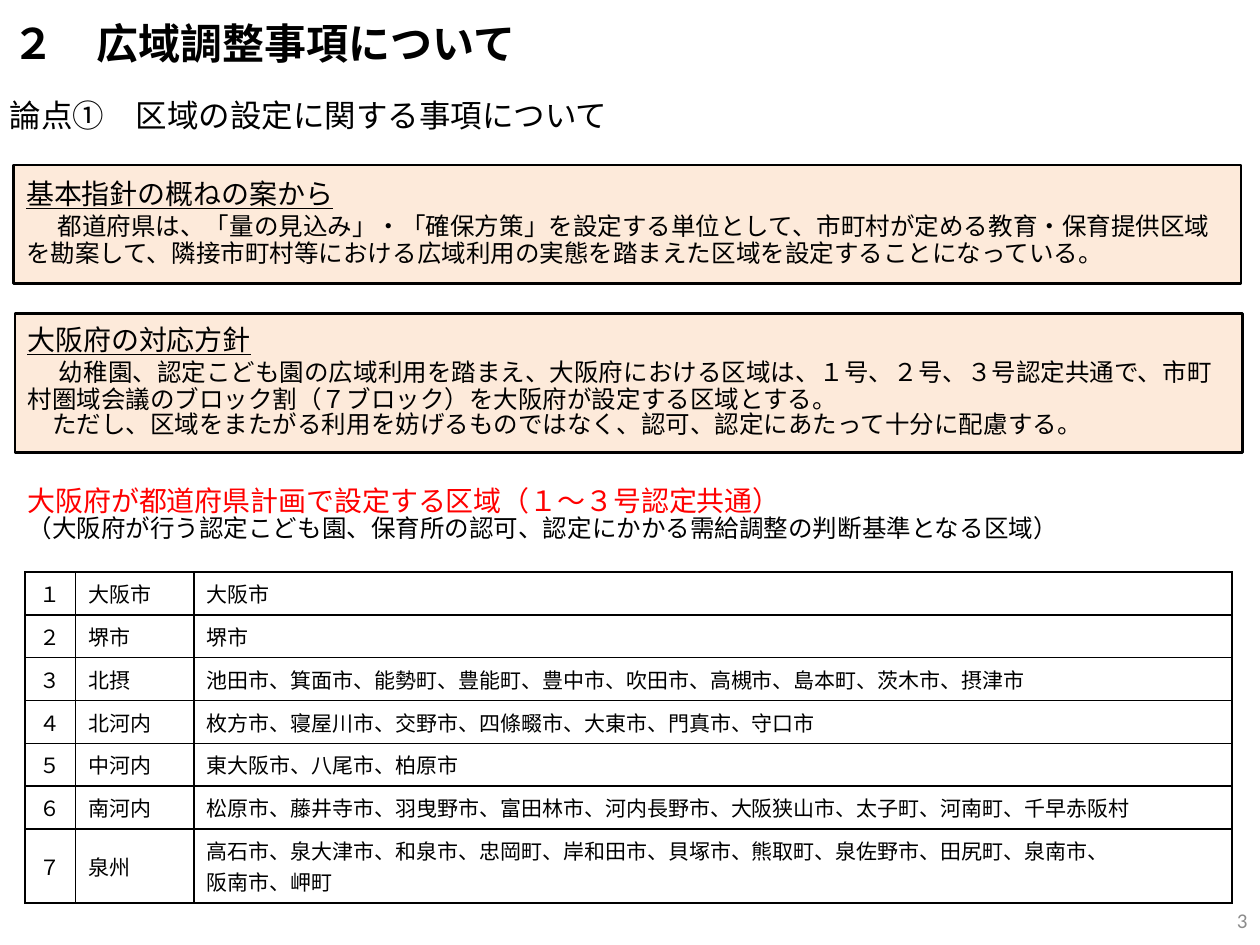
from lxml.etree import SubElement
from pptx import Presentation
from pptx.dml.color import RGBColor
from pptx.enum.shapes import MSO_SHAPE
from pptx.enum.text import MSO_ANCHOR as Anchor, PP_ALIGN as Align
from pptx.oxml.ns import qn
from pptx.util import Inches, Pt

COLORS = {"text": "000000", "accent": "FF0000", "panel": "FDEADA", "number": "8C8C8C"}
GOTHIC, LATIN = "Noto Sans CJK JP", "Calibri"
LEADING = 0.85

GUIDELINE = [
    [("基本指針の概ねの案から", 16, GOTHIC, True)],
    [("　", 18, LATIN, False),
     ("都道府県は、「量の見込み」・「確保方策」を設定する単位として、市町村が定める教育・保育提供区域を勘案して、"
      "隣接市町村等における広域利用の実態を踏まえた区域を設定することになっている。", 14, GOTHIC, False)],
]
POLICY = [
    [("大阪府の対応方針", 16, GOTHIC, True)],
    [("　", 18, LATIN, False),
     ("幼稚園、認定こども園の広域利用を踏まえ、大阪府における区域は、１号、２号、３号認定共通で、"
      "市町村圏域会議のブロック割（７ブロック）を大阪府が設定する区域とする。", 14, GOTHIC, False)],
    [("　ただし、区域をまたがる利用を妨げるものではなく、認可、認定にあたって十分に配慮する。", 14, GOTHIC, False)],
]
AREAS = [
    ("１", "大阪市", ["大阪市"]),
    ("２", "堺市", ["堺市"]),
    ("３", "北摂", ["池田市、箕面市、能勢町、豊能町、豊中市、吹田市、高槻市、島本町、茨木市、摂津市"]),
    ("４", "北河内", ["枚方市、寝屋川市、交野市、四條畷市、大東市、門真市、守口市"]),
    ("５", "中河内", ["東大阪市、八尾市、柏原市"]),
    ("６", "南河内", ["松原市、藤井寺市、羽曳野市、富田林市、河内長野市、大阪狭山市、太子町、河南町、千早赤阪村"]),
    ("７", "泉州", ["高石市、泉大津市、和泉市、忠岡町、岸和田市、貝塚市、熊取町、泉佐野市、田尻町、泉南市、",
                  "阪南市、岬町"]),
]


def rgb(name):
    """Return the named palette colour."""
    return RGBColor.from_string(COLORS[name])


def add_run(paragraph, text, size, font=GOTHIC, color="text", bold=False, underline=False):
    """Add one formatted run, with the Gothic face for Japanese letters."""
    run = paragraph.add_run()
    run.text = text
    run.font.size, run.font.name = Pt(size), font
    run.font.bold, run.font.underline = bold, underline
    run.font.color.rgb = rgb(color)
    SubElement(run.font._element, qn("a:ea"), typeface=GOTHIC)


def add_paragraphs(frame, count, align=Align.LEFT, leading=None):
    """Return the given number of aligned paragraphs in a text frame."""
    paragraphs = [frame.paragraphs[0]] + [frame.add_paragraph() for _ in range(count - 1)]
    for paragraph in paragraphs:
        paragraph.alignment = align
        paragraph.line_spacing = leading
    return paragraphs


def add_title(slide, box):
    """Place and format the slide title."""
    title = slide.shapes.title
    title.left, title.top, title.width, title.height = map(Inches, box)
    frame = title.text_frame
    frame.vertical_anchor = Anchor.MIDDLE
    paragraph, = add_paragraphs(frame, 1)
    add_run(paragraph, "２　広域調整事項について", 24, LATIN, bold=True)


def add_text(slide, box, lines, align=Align.LEFT, anchor=Anchor.TOP, leading=LEADING):
    """Add a text box with one run to each line."""
    frame = slide.shapes.add_textbox(*map(Inches, box)).text_frame
    frame.word_wrap = True
    frame.vertical_anchor = anchor
    for paragraph, line in zip(add_paragraphs(frame, len(lines), align, leading), lines):
        add_run(paragraph, *line)


def add_panel(slide, box, content):
    """Add a tinted panel with an underlined heading and its text."""
    panel = slide.shapes.add_shape(MSO_SHAPE.RECTANGLE, *map(Inches, box))
    panel.shadow.inherit = False
    panel.fill.solid()
    panel.fill.fore_color.rgb = rgb("panel")
    panel.line.color.rgb = rgb("text")
    panel.line.width = Pt(1.5)
    frame = panel.text_frame
    frame.word_wrap = True
    frame.vertical_anchor = Anchor.MIDDLE
    for paragraph, runs in zip(add_paragraphs(frame, len(content), leading=LEADING), content):
        for text, size, font, underline in runs:
            add_run(paragraph, text, size, font, underline=underline)


def set_borders(cell):
    """Draw a thin line on all four sides of a cell."""
    properties = cell._tc.get_or_add_tcPr()
    for index, side in enumerate(("a:lnL", "a:lnR", "a:lnT", "a:lnB")):
        line = properties.makeelement(qn(side), {"w": str(Pt(1))})
        fill = SubElement(line, qn("a:solidFill"))
        SubElement(fill, qn("a:srgbClr"), val=COLORS["text"])
        properties.insert(index, line)


def add_area_table(slide, box):
    """Add the table of areas and their municipalities."""
    table = slide.shapes.add_table(len(AREAS), 3, *map(Inches, box)).table
    table.first_row = table.horz_banding = False
    for column, width in zip(table.columns, (0.4, 0.94, 8.24)):
        column.width = Inches(width)
    for row, (number, area, towns) in zip(table.rows, AREAS):
        row.height = Inches(0.34 if len(towns) == 1 else 0.59)
        for index, (cell, lines) in enumerate(zip(row.cells, ([number], [area], towns))):
            cell.fill.background()
            cell.vertical_anchor = Anchor.MIDDLE
            align = Align.LEFT if index else Align.CENTER
            for paragraph, line in zip(add_paragraphs(cell.text_frame, len(lines), align), lines):
                add_run(paragraph, line, 12)
            set_borders(cell)


def main():
    """Build the slide and save it."""
    presentation = Presentation()
    presentation.slide_width, presentation.slide_height = Inches(10), Inches(7.5)
    slide = presentation.slides.add_slide(presentation.slide_layouts[5])
    add_title(slide, (0, 0, 7.68, 0.68))
    add_text(slide, (-0.02, 0.76, 9.88, 0.4), [("論点①　区域の設定に関する事項について　", 18)])
    add_panel(slide, (0.11, 1.31, 9.74, 0.94), GUIDELINE)
    add_panel(slide, (0.12, 2.49, 9.74, 1.1), POLICY)
    add_text(slide, (0.12, 3.83, 9.72, 0.61), [
        ("大阪府が都道府県計画で設定する区域（１～３号認定共通）", 16, GOTHIC, "accent"),
        ("（大阪府が行う認定こども園、保育所の認可、認定にかかる需給調整の判断基準となる区域）", 14),
    ])
    add_area_table(slide, (0.2, 4.54, 9.58, 2.63))
    add_text(slide, (7.67, 7.1, 2.33, 0.4), [("3", 12, LATIN, "number")],
             Align.RIGHT, Anchor.MIDDLE, None)
    presentation.save("out.pptx")


if __name__ == "__main__":
    main()
